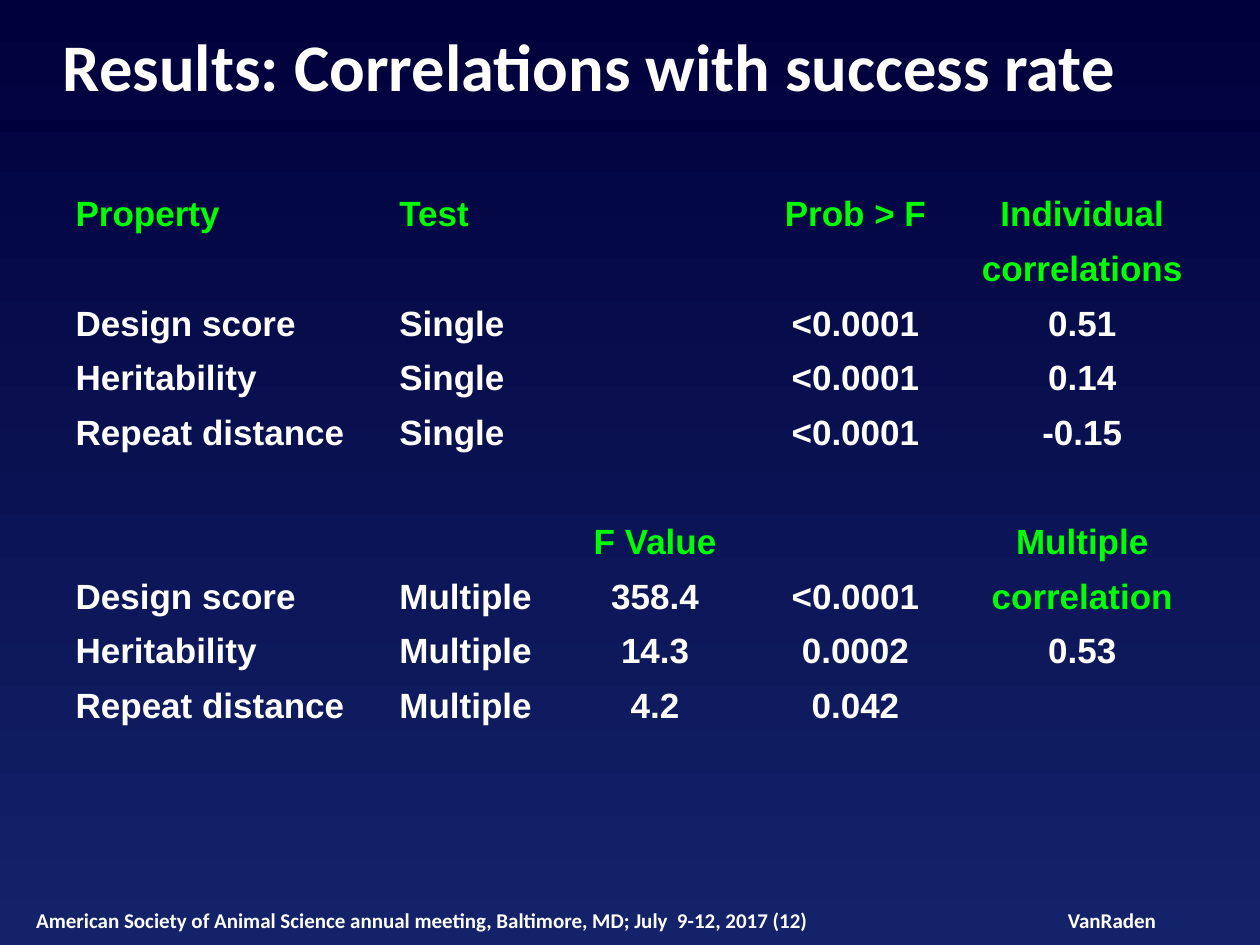
from pptx import Presentation
from pptx.dml.color import RGBColor
from pptx.enum.shapes import MSO_CONNECTOR
from pptx.enum.text import MSO_ANCHOR, PP_ALIGN
from pptx.oxml.ns import qn
from pptx.util import Inches, Pt
from lxml import etree

LEFT, CENTER = PP_ALIGN.LEFT, PP_ALIGN.CENTER
TOP, MIDDLE = MSO_ANCHOR.TOP, MSO_ANCHOR.MIDDLE
STRAIGHT = MSO_CONNECTOR.STRAIGHT

COLORS = {"navy": "00003C", "blue": "142369", "white": "FFFFFF", "green": "00FF00"}
NO_STYLE_NO_GRID = "{2D5ABB26-0587-4C30-8999-92F81FD0307C}"

COL_WIDTHS = [2.57, 1.44, 1.38, 1.8, 1.8]
COL_ALIGNS = [LEFT, LEFT, CENTER, CENTER, CENTER]
ROW_HEIGHTS = [0.43] * 8 + [0.41] * 2
ROWS = [
    ["Property", "Test", "", "Prob > F", "Individual"],
    ["", "", "", "", "correlations"],
    ["Design score", "Single", "", "<0.0001", "0.51"],
    ["Heritability", "Single", "", "<0.0001", "0.14"],
    ["Repeat distance", "Single", "", "<0.0001", "-0.15"],
    ["", "", "", "", ""],
    ["", "", "F Value", "", "Multiple"],
    ["Design score", "Multiple", "358.4", "<0.0001", "correlation"],
    ["Heritability", "Multiple", "14.3", "0.0002", "0.53"],
    ["Repeat distance", "Multiple", "4.2", "0.042", ""],
]
HEADING_ROWS = {0, 1, 6}
HEADING_CELLS = {(7, 4)}


def rgb(name):
    return RGBColor.from_string(COLORS[name])


def add_run(p, text, size, font, color="white"):
    r = p.add_run()
    r.text = text
    r.font.size = Pt(size)
    r.font.name = font
    r.font.bold = True
    r.font.color.rgb = rgb(color)


def add_text(s, box, text, size, align=LEFT, anchor=TOP, wrap=True):
    tf = s.shapes.add_textbox(*map(Inches, box)).text_frame
    tf.margin_left = tf.margin_right = tf.margin_top = tf.margin_bottom = 0
    tf.word_wrap = wrap
    tf.vertical_anchor = anchor
    p = tf.paragraphs[0]
    p.alignment = align
    add_run(p, text, size, "Calibri")


def paint_background(s):
    fill = s.background.fill
    fill.gradient()
    fill.gradient_angle = 270
    for stop, position, color in zip(fill.gradient_stops, (0, 1), ("navy", "blue")):
        stop.position = position
        stop.color.rgb = rgb(color)


def add_rule(s, left, top, width):
    line = s.shapes.add_connector(
        STRAIGHT, Inches(left), Inches(top), Inches(left + width), Inches(top))
    line.line.color.rgb = rgb("navy")
    line.line.width = Pt(6.5)
    etree.SubElement(line._element.spPr, qn("a:effectLst"))


def add_footer(s, left, top, height):
    add_text(s, (left + 8.22, top, 0.71, height), "VanRaden", 12,
             CENTER, MIDDLE, wrap=False)
    add_text(s, (left, top, 7.03, height),
             " American Society of Animal Science annual meeting, "
             "Baltimore, MD; July  9-12, 2017 (12)", 12, anchor=MIDDLE)


def add_results_table(s, left, top):
    frame = s.shapes.add_table(
        len(ROWS), len(COL_WIDTHS), Inches(left), Inches(top),
        Inches(sum(COL_WIDTHS)), Inches(sum(ROW_HEIGHTS)))
    table = frame.table
    table.first_row = table.horz_banding = False
    table._tbl.tblPr.find(qn("a:tableStyleId")).text = NO_STYLE_NO_GRID
    for column, width in zip(table.columns, COL_WIDTHS):
        column.width = Inches(width)
    for i, (row, height) in enumerate(zip(ROWS, ROW_HEIGHTS)):
        table.rows[i].height = Inches(height)
        for j, (text, align) in enumerate(zip(row, COL_ALIGNS)):
            cell = table.cell(i, j)
            cell.fill.background()
            if text:
                heading = i in HEADING_ROWS or (i, j) in HEADING_CELLS
                p = cell.text_frame.paragraphs[0]
                p.alignment = align
                add_run(p, text, 20, "Arial", "green" if heading else "white")


def main():
    prs = Presentation()
    prs.slide_width, prs.slide_height = Inches(10), Inches(7.5)
    s = prs.slides.add_slide(prs.slide_layouts[6])
    paint_background(s)
    add_rule(s, 0, 1, 10)
    add_footer(s, 0.25, 7.2, 0.2)
    add_text(s, (0.5, 0.2, 9, 0.64), "Results: Correlations with success rate", 38)
    add_results_table(s, 0.5, 1.5)
    prs.save("out.pptx")


if __name__ == "__main__":
    main()
